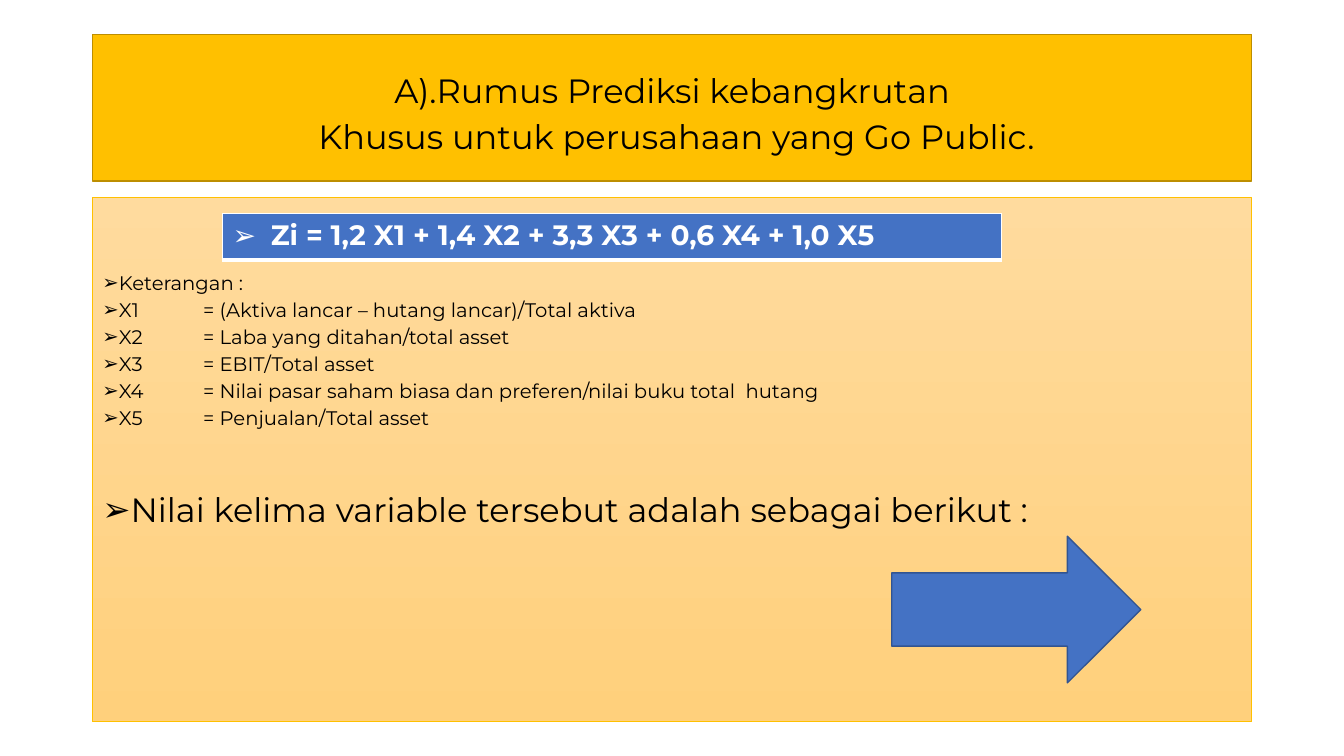
from dataclasses import dataclass

from lxml.etree import SubElement
from pptx import Presentation
from pptx.dml.color import RGBColor
from pptx.enum.shapes import MSO_SHAPE
from pptx.enum.text import MSO_ANCHOR, MSO_AUTO_SIZE, PP_ALIGN
from pptx.oxml import parse_xml
from pptx.oxml.ns import nsdecls, qn
from pptx.util import Inches, Pt

SLIDE_WIDTH, SLIDE_HEIGHT = Inches(13.33), Inches(7.5)
FONT = "Montserrat"
BLACK, WHITE, BLUE, GOLD = "000000", "FFFFFF", "4472C4", "FFC000"


@dataclass(frozen=True)
class Area:
    """A rectangle in percent of the slide's width and height."""
    left: float
    top: float
    width: float
    height: float

    def box(self) -> tuple[int, int, int, int]:
        return (int(SLIDE_WIDTH * self.left / 100), int(SLIDE_HEIGHT * self.top / 100),
                int(SLIDE_WIDTH * self.width / 100), int(SLIDE_HEIGHT * self.height / 100))


@dataclass(frozen=True)
class Point:
    text: str
    size: int = 14
    space_before: int = 0


@dataclass(frozen=True)
class Border:
    side: str
    points: int


HEADING = Area(6.88, 4.53, 86.25, 19.4)
EXPLANATION = Area(6.88, 26.05, 86.25, 69.4)
FORMULA = Area(16.55, 28.27, 57.95, 6.13)
NEXT_ARROW = Area(66.35, 70.93, 18.53, 19.4)

POINTS = [
    Point("Keterangan :"),
    Point("X1\t= (Aktiva lancar – hutang lancar)/Total aktiva"),
    Point("X2\t= Laba yang ditahan/total asset"),
    Point("X3\t= EBIT/Total asset"),
    Point("X4\t= Nilai pasar saham biasa dan preferen/nilai buku total  hutang"),
    Point("X5\t= Penjualan/Total asset"),
    Point("Nilai kelima variable tersebut adalah sebagai berikut :", 24, 38),
]
BORDERS = [Border("L", 1), Border("R", 1), Border("T", 1), Border("B", 3)]


def color(code: str) -> RGBColor:
    return RGBColor.from_string(code)


def outline(shape, code: str, points: float) -> None:
    shape.line.color.rgb = color(code)
    shape.line.width = Pt(points)


def style_runs(paragraph, size: int, code: str, bold: bool = False) -> None:
    for run in paragraph.runs:
        run.font.name = FONT
        run.font.size = Pt(size)
        run.font.bold = bold
        run.font.color.rgb = color(code)


def add_bullet(paragraph, margin: float, indent: float) -> None:
    """Give the paragraph an arrowhead bullet and tab stops one inch apart."""
    properties = paragraph._p.get_or_add_pPr()
    properties.set("marL", str(Inches(margin)))
    properties.set("indent", str(Inches(indent)))
    properties.set("defTabSz", str(Inches(1)))
    SubElement(properties, qn("a:buFont")).set("typeface", FONT)
    SubElement(properties, qn("a:buChar")).set("char", "➢")


def add_block(slide, preset: MSO_SHAPE, area: Area):
    block = slide.shapes.add_shape(preset, *area.box())
    block.shadow.inherit = False
    return block


def fill_heading(title) -> None:
    title.left, title.top, title.width, title.height = HEADING.box()
    title.fill.solid()
    title.fill.fore_color.rgb = color(GOLD)
    outline(title, "BD8E00", 1)
    frame = title.text_frame
    frame.text = "A).Rumus Prediksi kebangkrutan\v Khusus untuk perusahaan yang Go Public."
    frame.word_wrap = True
    frame.auto_size = MSO_AUTO_SIZE.NONE
    frame.vertical_anchor = MSO_ANCHOR.MIDDLE
    frame.margin_top = Inches(0.1)
    lines = frame.paragraphs[0]
    lines.alignment = PP_ALIGN.CENTER
    lines.line_spacing = 1.15
    style_runs(lines, 24, BLACK)


def add_explanation(slide) -> None:
    panel = add_block(slide, MSO_SHAPE.RECTANGLE, EXPLANATION)
    panel.fill.gradient()
    panel.fill.gradient_angle = 270
    for stop, code in zip(panel.fill.gradient_stops, ("FFDB9E", "FFD07C")):
        stop.color.rgb = color(code)
    outline(panel, GOLD, 0.5)
    frame = panel.text_frame
    frame.text = "\n".join(point.text for point in POINTS)
    frame.word_wrap = True
    frame.vertical_anchor = MSO_ANCHOR.TOP
    frame.margin_top = Inches(0.7)
    for paragraph, point in zip(frame.paragraphs, POINTS):
        paragraph.alignment = PP_ALIGN.LEFT
        paragraph.line_spacing = 1.15
        paragraph.space_before = Pt(point.space_before)
        style_runs(paragraph, point.size, BLACK)
        add_bullet(paragraph, 0.06, -0.31)


def add_formula(slide) -> None:
    table = slide.shapes.add_table(1, 1, *FORMULA.box()).table
    cell = table.cell(0, 0)
    cell.fill.solid()
    cell.fill.fore_color.rgb = color(BLUE)
    cell.text_frame.text = "Zi = 1,2 X1 + 1,4 X2 + 3,3 X3 + 0,6 X4 + 1,0 X5"
    formula = cell.text_frame.paragraphs[0]
    style_runs(formula, 20, WHITE, bold=True)
    add_bullet(formula, 0.38, -0.38)
    properties = cell._tc.get_or_add_tcPr()
    for position, border in enumerate(BORDERS):
        properties.insert(position, parse_xml(
            f'<a:ln{border.side} {nsdecls("a")} w="{Pt(border.points)}"><a:solidFill>'
            f'<a:srgbClr val="{WHITE}"/></a:solidFill></a:ln{border.side}>'))


def add_next_arrow(slide) -> None:
    arrow = add_block(slide, MSO_SHAPE.RIGHT_ARROW, NEXT_ARROW)
    arrow.fill.solid()
    arrow.fill.fore_color.rgb = color(BLUE)
    outline(arrow, "325491", 1)


def main() -> None:
    deck = Presentation()
    deck.slide_width, deck.slide_height = SLIDE_WIDTH, SLIDE_HEIGHT
    slide = deck.slides.add_slide(deck.slide_layouts[5])
    fill_heading(slide.shapes.title)
    add_explanation(slide)
    add_formula(slide)
    add_next_arrow(slide)
    deck.save("out.pptx")


if __name__ == "__main__":
    main()
